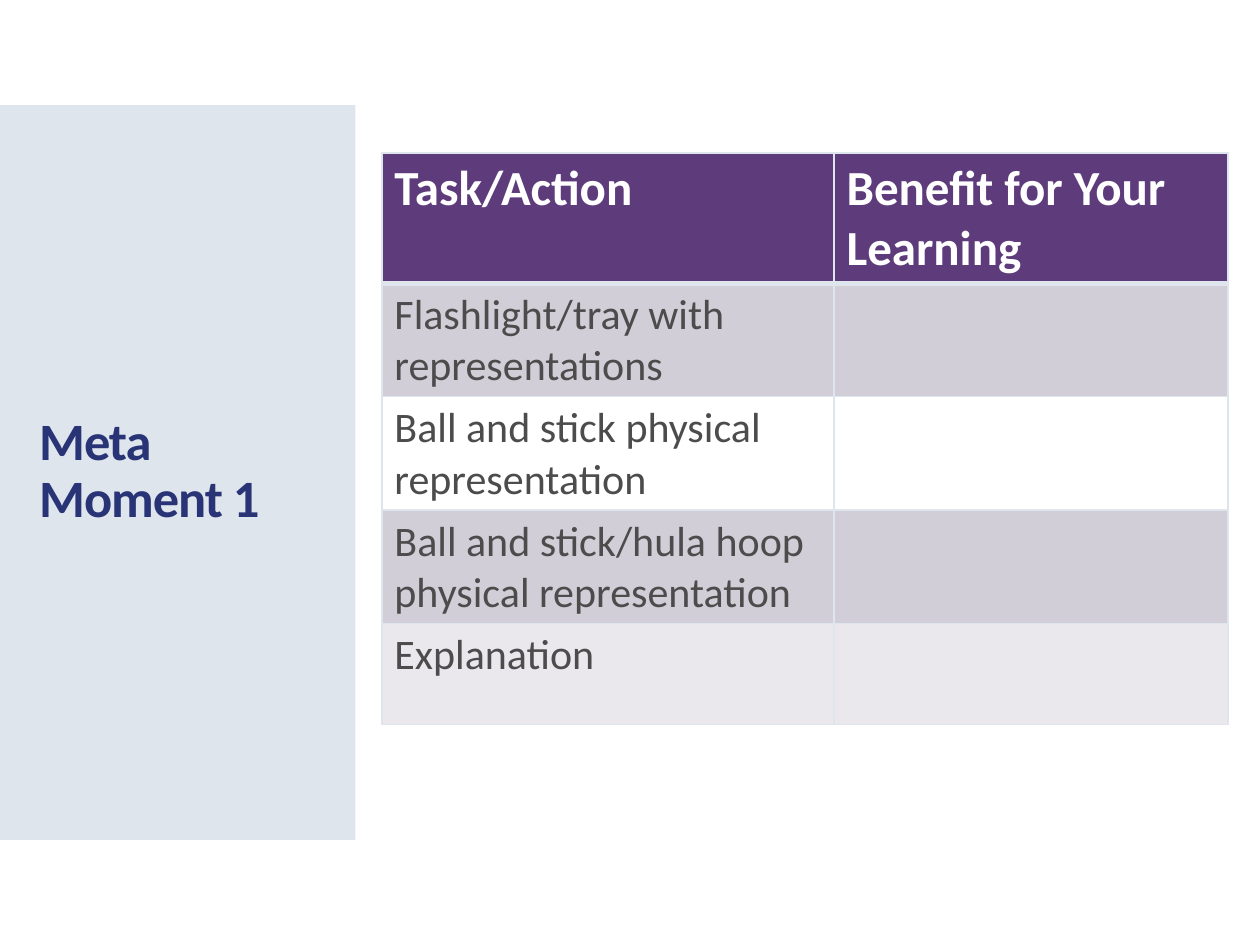
"""Build the Meta Moment 1 slide with its task and benefit table."""
from lxml import etree
from pptx import Presentation
from pptx.dml.color import RGBColor
from pptx.enum.shapes import MSO_SHAPE
from pptx.enum.text import MSO_ANCHOR
from pptx.oxml.ns import qn
from pptx.util import Pt

RECTANGLE = MSO_SHAPE.RECTANGLE
MIDDLE = MSO_ANCHOR.MIDDLE

COLORS = {
    "panel": "DFE5ED",
    "title": "293476",
    "header": "5E3C7C",
    "white": "FFFFFF",
    "body": "4C4C4C",
    "band": "D2CED7",
    "last": "EAE8EC",
}
TITLE = "Meta Moment 1"
ROWS = [
    ("Task/Action", "Benefit for Your Learning"),
    ("Flashlight/tray with representations", ""),
    ("Ball and stick physical representation", ""),
    ("Ball and stick/hula hoop physical representation", ""),
    ("Explanation", ""),
]
ROW_FILLS = ["header", "band", "white", "band", "last"]
ROW_HEIGHTS = [70, 60.5, 60.5, 60.5, 57.6]
COLUMN_WIDTHS = [258.4, 225]
TABLE_LEFT, TABLE_TOP = 218.2, 87.4


def rgb(name):
    return RGBColor.from_string(COLORS[name])


def write(frame, text, size, color, bold=False, spacing=None, line_spacing=None):
    frame.word_wrap = True
    para = frame.paragraphs[0]
    if line_spacing:
        para.line_spacing = line_spacing
    span = para.add_run()
    span.text = text
    span.font.name = "Calibri"
    span.font.size = Pt(size)
    span.font.bold = bold
    span.font.color.rgb = rgb(color)
    if spacing:
        span.font._element.set("spc", str(round(spacing * 100)))


def set_borders(cell, widths):
    properties = cell._tc.get_or_add_tcPr()
    for side, width in widths.items():
        line = etree.SubElement(properties, qn(f"a:ln{side}"), w=str(Pt(width)))
        fill = etree.SubElement(line, qn("a:solidFill"))
        etree.SubElement(fill, qn("a:srgbClr"), val=COLORS["panel"])


def add_panel(page):
    panel = page.shapes.add_shape(RECTANGLE, 0, Pt(60), Pt(203.2), Pt(420))
    panel.shadow.inherit = False
    panel.fill.solid()
    panel.fill.fore_color.rgb = rgb("panel")
    panel.line.fill.background()
    box = page.shapes.add_textbox(Pt(15.3), Pt(88.6), Pt(174.2), Pt(362.2))
    box.text_frame.vertical_anchor = MIDDLE
    write(box.text_frame, TITLE, 30, "title", bold=True, spacing=-0.6, line_spacing=0.9)


def add_task_table(page):
    table = page.shapes.add_table(
        len(ROWS), len(COLUMN_WIDTHS), Pt(TABLE_LEFT), Pt(TABLE_TOP),
        Pt(sum(COLUMN_WIDTHS)), Pt(sum(ROW_HEIGHTS)),
    ).table
    for column, width in zip(table.columns, COLUMN_WIDTHS):
        column.width = Pt(width)
    for index, (texts, fill, height) in enumerate(zip(ROWS, ROW_FILLS, ROW_HEIGHTS)):
        table.rows[index].height = Pt(height)
        header = index == 0
        widths = {"L": 1, "R": 1, "T": 3 if index == 1 else 1, "B": 3 if header else 1}
        for cell, text in zip(table.rows[index].cells, texts):
            set_borders(cell, widths)
            cell.fill.solid()
            cell.fill.fore_color.rgb = rgb(fill)
            if text:
                write(cell.text_frame, text, 28 if header else 24,
                      "white" if header else "body", bold=header)


def main():
    deck = Presentation()
    deck.slide_width, deck.slide_height = Pt(720), Pt(540)
    page = deck.slides.add_slide(deck.slide_layouts[6])
    add_panel(page)
    add_task_table(page)
    deck.save("out.pptx")


if __name__ == "__main__":
    main()
